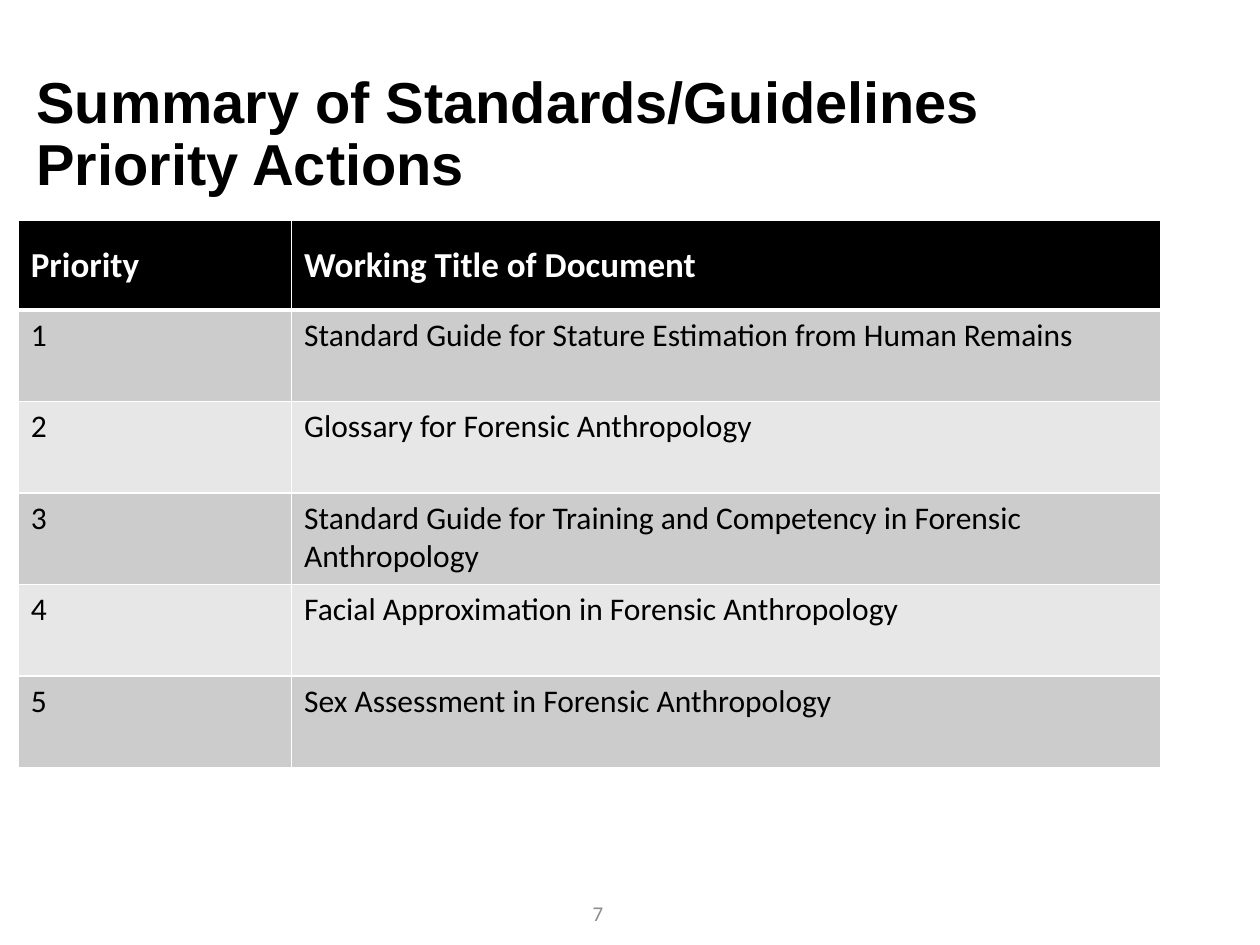
from lxml.etree import SubElement
from pptx import Presentation
from pptx.dml.color import RGBColor
from pptx.enum.text import MSO_ANCHOR as Anchor, PP_ALIGN as Align
from pptx.oxml.ns import qn
from pptx.util import Inches, Pt

COLS, ROWS = 100, 75
BLACK, WHITE, GRAY = "000000", "FFFFFF", "8C8C8C"
BANDS = ("CCCCCC", "E7E7E7")

HEADER = ("Priority", "Working Title of Document")
DOCUMENTS = (
    "Standard Guide for Stature Estimation from Human Remains",
    "Glossary for Forensic Anthropology",
    "Standard Guide for Training and Competency in Forensic Anthropology",
    "Facial Approximation in Forensic Anthropology",
    "Sex Assessment in Forensic Anthropology",
)


def rgb(color):
    return RGBColor.from_string(color)


class Deck:
    """Slide laid out on a grid of COLS by ROWS units."""

    heading_font, body_font = "Arial", "Calibri"

    def __init__(self):
        self.prs = Presentation()
        self.prs.slide_width, self.prs.slide_height = Inches(10), Inches(7.5)
        self.s = self.prs.slides.add_slide(self.prs.slide_layouts[6])

    def x(self, cols):
        return round(self.prs.slide_width * cols / COLS)

    def y(self, rows):
        return round(self.prs.slide_height * rows / ROWS)

    def place(self, left, top, width, height):
        return self.x(left), self.y(top), self.x(width), self.y(height)

    def fill_text(self, tf, text, size, color, bold=False, font=None):
        tf.text = text
        p = tf.paragraphs[0]
        f = p.runs[0].font
        f.name, f.size, f.bold = font or self.body_font, Pt(size), bold
        f.color.rgb = rgb(color)
        return p

    def text(self, box, text, size, color, align=Align.LEFT, spacing=1.0, **style):
        tf = self.s.shapes.add_textbox(*self.place(*box)).text_frame
        tf.word_wrap, tf.vertical_anchor = True, Anchor.MIDDLE
        p = self.fill_text(tf, text, size, color, **style)
        p.alignment, p.line_spacing = align, spacing

    def borders(self, cell, bottom):
        """White cell borders; they must precede the fill in the cell's XML."""
        tc_pr = cell._tc.get_or_add_tcPr()
        for side, width in (("L", 1), ("R", 1), ("T", 1), ("B", bottom)):
            ln = SubElement(tc_pr, qn(f"a:ln{side}"), w=str(Pt(width)))
            fill = SubElement(ln, qn("a:solidFill"))
            SubElement(fill, qn("a:srgbClr"), val=WHITE)

    def table(self, box, rows, widths, heights):
        shape = self.s.shapes.add_table(len(rows), len(widths), *self.place(*box))
        table = shape.table
        for column, width in zip(table.columns, widths):
            column.width = self.x(width)
        for i, (row, height) in enumerate(zip(rows, heights)):
            table.rows[i].height = self.y(height)
            header = i == 0
            for j, text in enumerate(row):
                cell = table.cell(i, j)
                self.borders(cell, bottom=3 if header else 1)
                cell.fill.solid()
                cell.fill.fore_color.rgb = rgb(BLACK if header else BANDS[(i - 1) % 2])
                cell.vertical_anchor = Anchor.MIDDLE if header else Anchor.TOP
                self.fill_text(cell.text_frame, text, 20 if header else 18,
                               WHITE if header else BLACK, bold=header)


def main():
    deck = Deck()
    deck.text((1.9, 3.5, 86.2, 14.5), "Summary of Standards/Guidelines Priority Actions",
              33, BLACK, spacing=0.9, bold=True, font=deck.heading_font)
    rows = [HEADER] + [(str(n), title) for n, title in enumerate(DOCUMENTS, 1)]
    heights = [7.1] + [7.26] * len(DOCUMENTS)
    deck.table((1.45, 17.5, 90.7, sum(heights)), rows, (21.7, 69), heights)
    deck.text((36.2, 70.5, 22.5, 4), "7", 12, GRAY, align=Align.CENTER)
    deck.prs.save("out.pptx")


if __name__ == "__main__":
    main()
